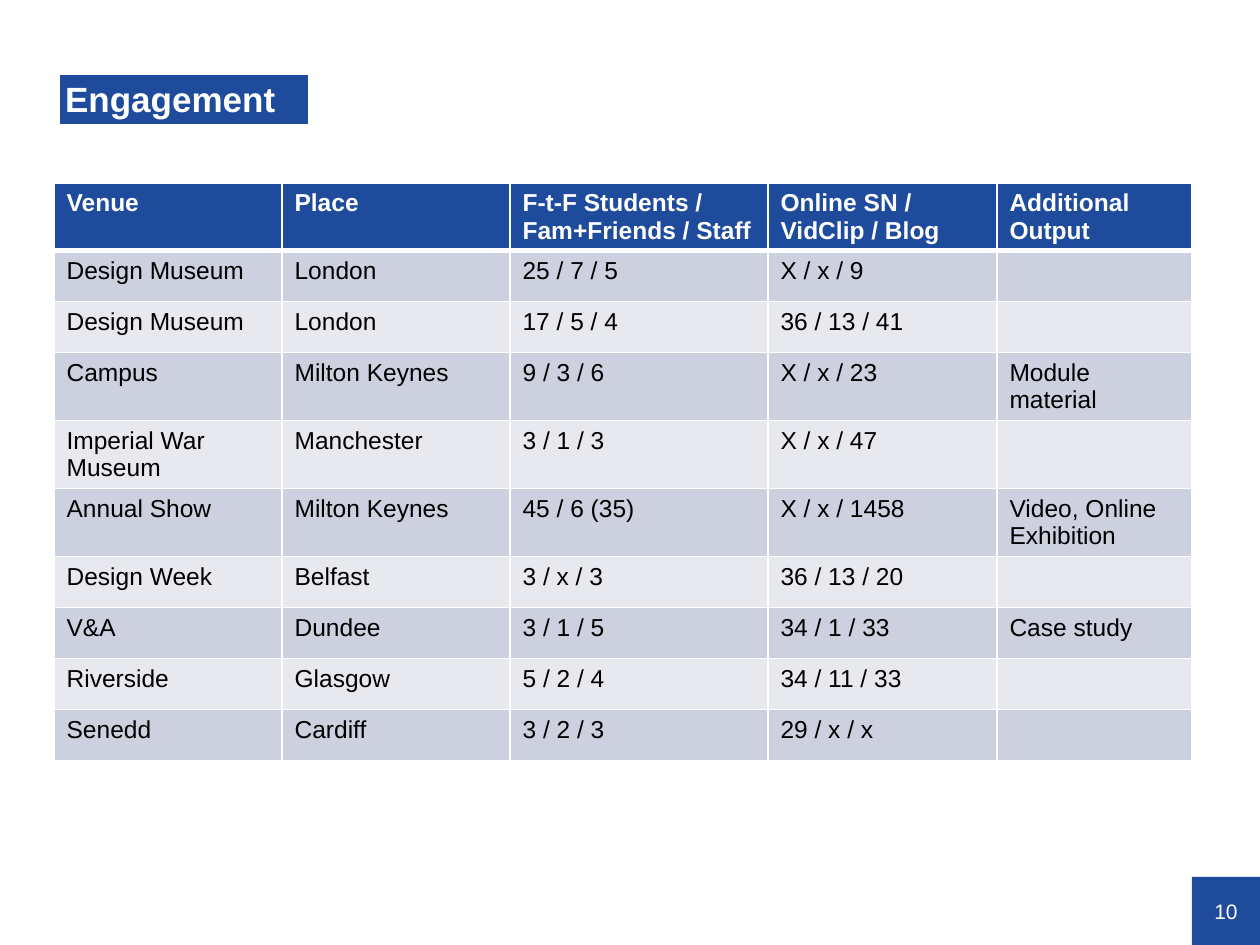
from dataclasses import dataclass

from lxml.etree import SubElement
from pptx import Presentation
from pptx.dml.color import RGBColor
from pptx.enum.shapes import MSO_SHAPE
from pptx.enum.text import MSO_ANCHOR, MSO_AUTO_SIZE, PP_ALIGN
from pptx.oxml.ns import qn
from pptx.util import Emu, Pt

PX = 914400 // 126


@dataclass(frozen=True)
class Theme:
    """Colours, font and type sizes of the slide."""

    blue: str = "1E4B9B"
    white: str = "FFFFFF"
    black: str = "000000"
    bands: tuple = ("CDD0DE", "E8E9EF")
    font: str = "Arial"
    title_size: int = 20
    table_size: int = 14
    number_size: int = 12


THEME = Theme()

COLUMN_WIDTHS = [228, 228, 258, 229, 195]
ROW_HEIGHTS = [67, 51, 51, 68, 68, 68, 51, 51, 51, 51]
ROWS = [
    ("Venue", "Place", "F-t-F Students / Fam+Friends / Staff",
     "Online SN / VidClip / Blog", "Additional Output"),
    ("Design Museum", "London", "25 / 7 / 5", "X / x / 9", ""),
    ("Design Museum", "London", "17 / 5 / 4", "36 / 13 / 41", ""),
    ("Campus", "Milton Keynes", "9 / 3 / 6", "X / x / 23", "Module material"),
    ("Imperial War Museum", "Manchester", "3 / 1 / 3", "X / x / 47", ""),
    ("Annual Show", "Milton Keynes", "45 / 6 (35)", "X / x / 1458",
     "Video, Online Exhibition"),
    ("Design Week", "Belfast", "3 / x / 3", "36 / 13 / 20", ""),
    ("V&A", "Dundee", "3 / 1 / 5", "34 / 1 / 33", "Case study"),
    ("Riverside", "Glasgow", "5 / 2 / 4", "34 / 11 / 33", ""),
    ("Senedd", "Cardiff", "3 / 2 / 3", "29 / x / x", ""),
]


def px(length):
    """Turn pixels into EMU."""
    return Emu(length * PX)


def set_fill(target, color):
    """Give a shape or cell a solid fill."""
    target.fill.solid()
    target.fill.fore_color.rgb = RGBColor.from_string(color)


def set_font(paragraph, size, color, bold=False):
    """Set the typeface, size, colour and weight of a paragraph."""
    font = paragraph.font
    font.name, font.size, font.bold = THEME.font, Pt(size), bold
    font.color.rgb = RGBColor.from_string(color)


def set_frame(shape, left_margin, top_margin):
    """Centre the text vertically and set its margins."""
    frame = shape.text_frame
    frame.auto_size = MSO_AUTO_SIZE.NONE
    frame.word_wrap = True
    frame.vertical_anchor = MSO_ANCHOR.MIDDLE
    frame.margin_left, frame.margin_top = px(left_margin), px(top_margin)
    frame.margin_right = frame.margin_bottom = 0


def set_borders(cell, bottom_width):
    """Draw white borders around a cell."""
    properties = cell._tc.get_or_add_tcPr()
    widths = {"a:lnL": 1, "a:lnR": 1, "a:lnT": 1, "a:lnB": bottom_width}
    for index, (tag, width) in enumerate(widths.items()):
        line = SubElement(properties, qn(tag), w=str(Pt(width)))
        properties.insert(index, line)
        fill = SubElement(line, qn("a:solidFill"))
        SubElement(fill, qn("a:srgbClr"), val=THEME.white)


def add_title(slide, text):
    """Fill the title placeholder as a blue label."""
    title = slide.shapes.title
    title.left, title.top, title.width, title.height = map(px, (60, 75, 248, 49))
    set_fill(title, THEME.blue)
    set_frame(title, 5, 3)
    title.text_frame.text = text
    paragraph = title.text_frame.paragraphs[0]
    paragraph.alignment = PP_ALIGN.LEFT
    paragraph.line_spacing = 0.9
    set_font(paragraph, THEME.title_size, THEME.white, True)


def add_engagement_table(slide):
    """Add the venue table with a blue header and banded rows."""
    table = slide.shapes.add_table(
        len(ROWS), len(COLUMN_WIDTHS), px(54), px(183),
        px(sum(COLUMN_WIDTHS)), px(sum(ROW_HEIGHTS))).table
    for column, width in zip(table.columns, COLUMN_WIDTHS):
        column.width = px(width)
    for index, (row, height, texts) in enumerate(zip(table.rows, ROW_HEIGHTS, ROWS)):
        row.height = px(height)
        header = index == 0
        fill = THEME.blue if header else THEME.bands[(index - 1) % 2]
        color = THEME.white if header else THEME.black
        for cell, text in zip(row.cells, texts):
            cell.text = text
            set_fill(cell, fill)
            set_borders(cell, 3 if header else 1)
            set_font(cell.text_frame.paragraphs[0], THEME.table_size, color, header)


def add_page_number(slide, number):
    """Add the page number square in the bottom right corner."""
    square = slide.shapes.add_shape(
        MSO_SHAPE.RECTANGLE, px(1192), px(877), px(68), px(68))
    square.shadow.inherit = False
    set_fill(square, THEME.blue)
    square.line.fill.background()
    set_frame(square, 0, 0)
    square.text_frame.text = str(number)
    paragraph = square.text_frame.paragraphs[0]
    paragraph.alignment = PP_ALIGN.CENTER
    set_font(paragraph, THEME.number_size, THEME.white)


def main():
    """Build and save the slide."""
    presentation = Presentation()
    presentation.slide_width, presentation.slide_height = px(1260), px(945)
    slide = presentation.slides.add_slide(presentation.slide_layouts[5])
    add_page_number(slide, 10)
    add_engagement_table(slide)
    add_title(slide, "Engagement")
    presentation.save("out.pptx")


if __name__ == "__main__":
    main()
